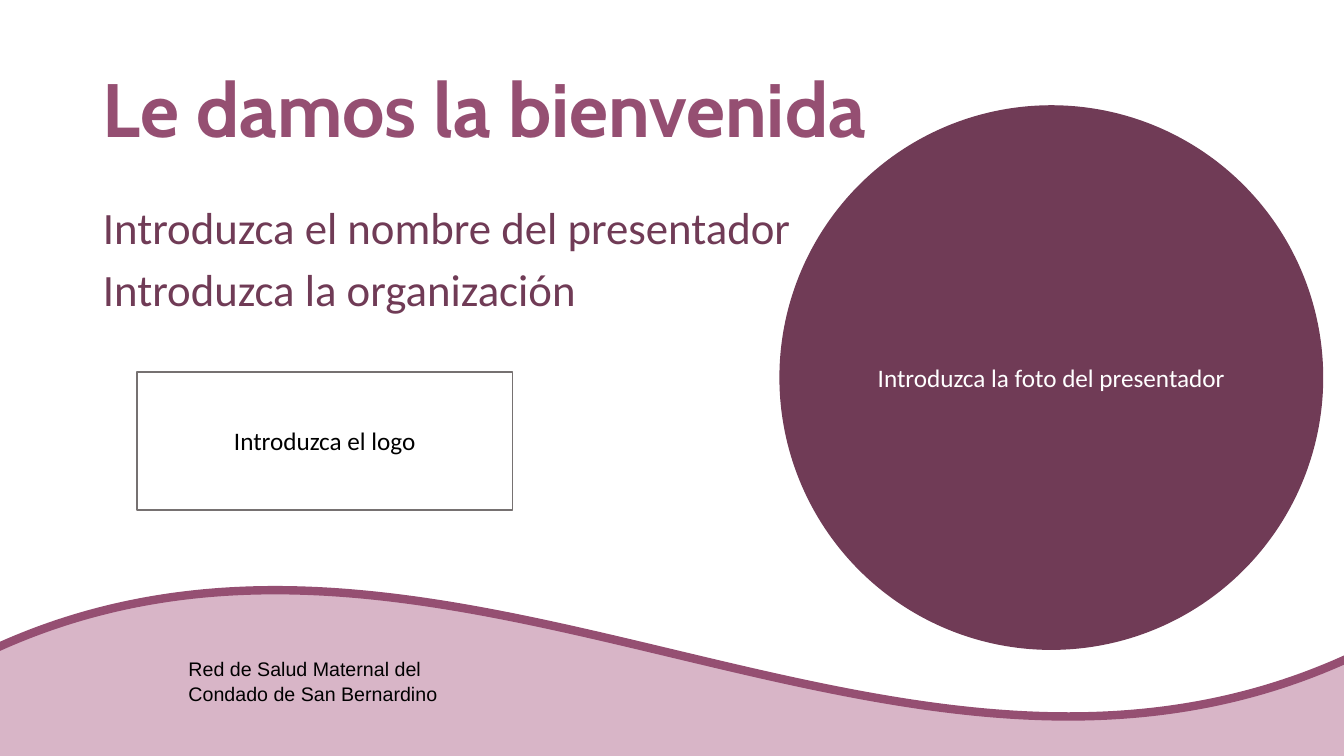
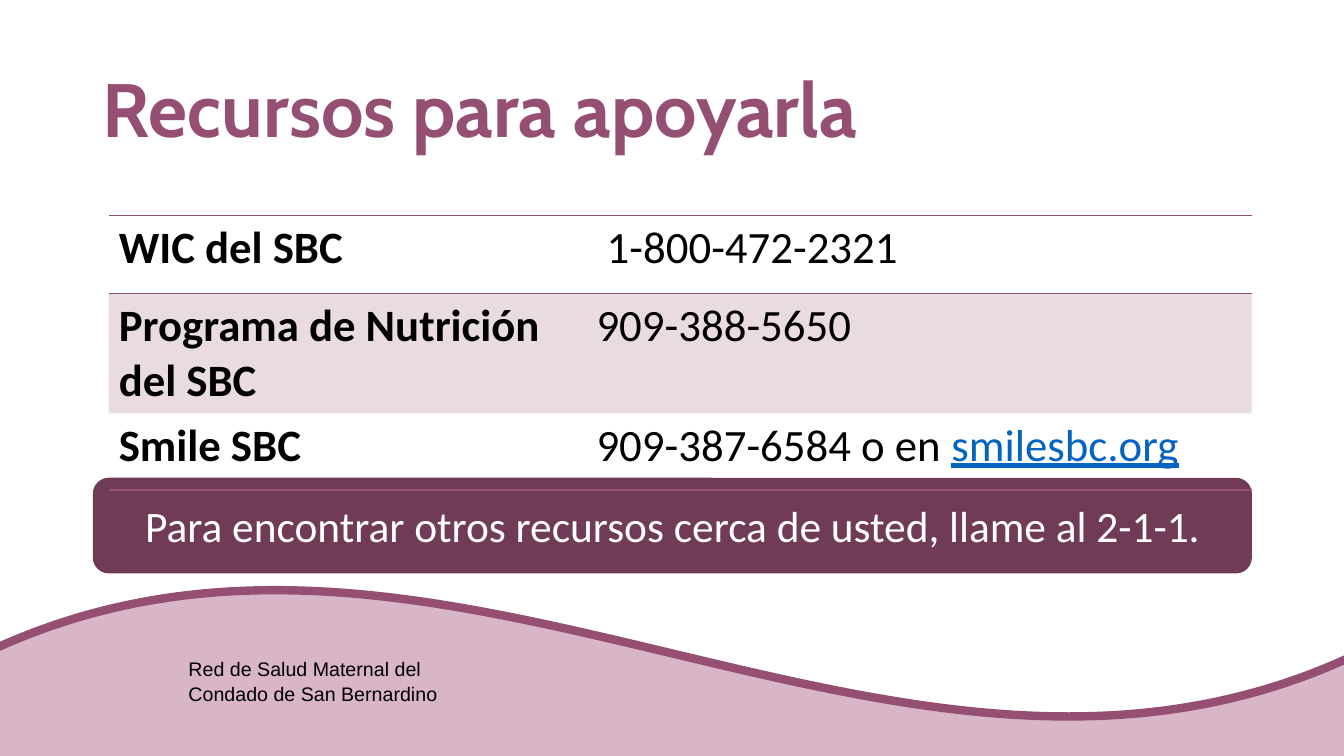
from dataclasses import dataclass

from pptx import Presentation
from pptx.dml.color import RGBColor
from pptx.enum.shapes import MSO_SHAPE
from pptx.enum.text import MSO_ANCHOR, MSO_AUTO_SIZE, PP_ALIGN
from pptx.oxml.ns import qn
from pptx.oxml.xmlchemy import OxmlElement
from pptx.util import Cm, Pt

WAVE, OVAL = MSO_SHAPE.WAVE, MSO_SHAPE.OVAL
RECT, ROUND = MSO_SHAPE.RECTANGLE, MSO_SHAPE.ROUNDED_RECTANGLE
TOP, MIDDLE = MSO_ANCHOR.TOP, MSO_ANCHOR.MIDDLE
LEFT, CENTER = PP_ALIGN.LEFT, PP_ALIGN.CENTER
FIXED = MSO_AUTO_SIZE.NONE
PLAIN = "{2D5ABB26-0587-4C30-8999-92F81FD0307C}"


@dataclass(frozen=True)
class Theme:
    plum: str = "954F72"
    dark: str = "703B56"
    pink: str = "D8B5C7"
    gray: str = "767171"
    link: str = "0563C1"
    white: str = "FFFFFF"
    black: str = "000000"
    head: str = "Cabin"
    text: str = "Calibri"
    foot: str = "Arial"
    huge: int = 54
    large: int = 32
    call: int = 31
    label: int = 18
    small: int = 14


THEME = Theme()


def place(shape, box):
    shape.left, shape.top, shape.width, shape.height = map(Cm, box)


def style(para, size, color, face=THEME.text, bold=False, align=LEFT):
    para.alignment = align
    for run in para.runs:
        font = run.font
        font.name, font.size, font.bold = face, Pt(size), bold
        font.color.rgb = RGBColor.from_string(color)


def paint(fill, color):
    fill.solid()
    fill.fore_color.rgb = RGBColor.from_string(color)


def panel(slide, kind, box, fill, line=None, width=1):
    shape = slide.shapes.add_shape(kind, *map(Cm, box))
    shape.shadow.inherit = False
    paint(shape.fill, fill)
    if line:
        paint(shape.line.fill, line)
        shape.line.width = Pt(width)
    else:
        shape.line.fill.background()
    return shape


def label(shape, text, size, color, face=THEME.text, align=CENTER, anchor=MIDDLE):
    frame = shape.text_frame
    frame.word_wrap = True
    frame.vertical_anchor = anchor
    frame.text = text
    style(frame.paragraphs[0], size, color, face, align=align)
    return frame.paragraphs[0]


def title(slide, text):
    shape = slide.shapes.title
    place(shape, (2.34, 1.02, 29.21, 3.68))
    shape.text_frame.auto_size = FIXED
    para = label(shape, text, THEME.huge, THEME.plum, THEME.head, LEFT)
    para.line_spacing = 0.9
    style(para, THEME.huge, THEME.plum, THEME.head, bold=True)


def body(slide, lines):
    shape = slide.placeholders[1]
    place(shape, (2.34, 5.05, 28.09, 12.09))
    frame = shape.text_frame
    frame.auto_size = FIXED
    frame.text = "\n".join(lines)
    for index, para in enumerate(frame.paragraphs):
        props = para._p.get_or_add_pPr()
        props.set("marL", "0")
        props.set("indent", "0")
        props.append(OxmlElement("a:buNone"))
        para.line_spacing = 0.9
        para.space_before = Pt(10 if index else 0)
        style(para, THEME.large, THEME.dark)


def footer(slide):
    shape = panel(slide, RECT, (4.5, 16.38, 7.39, 1.52), THEME.pink)
    para = label(shape, "Red de Salud Maternal del Condado de San Bernardino",
                 THEME.small, THEME.black, THEME.foot, LEFT, TOP)
    para.line_spacing = 1.07


def backdrop(deck, slide):
    wave = panel(slide, WAVE, (-0.38, 14.81, 34.62, 13.23),
                 THEME.pink, THEME.plum, 6).element
    wave.xpath(".//p:cNvPr")[0].set("id", "20")
    deck.slide_master.shapes.element.insert(2, wave)


def border(cell, side):
    line = OxmlElement(f"a:{side}")
    line.set("w", str(Pt(1)))
    fill = OxmlElement("a:solidFill")
    color = OxmlElement("a:srgbClr")
    color.set("val", THEME.plum)
    fill.append(color)
    line.append(fill)
    cell._tc.get_or_add_tcPr().append(line)


def tint(cell, percent):
    paint(cell.fill, THEME.plum)
    alpha = OxmlElement("a:alpha")
    alpha.set("val", str(percent * 1000))
    cell._tc.tcPr.find(qn("a:solidFill"))[0].append(alpha)


def table(slide, rows, spot, widths, heights):
    frame = slide.shapes.add_table(len(rows), len(widths), *map(Cm, spot),
                                   Cm(sum(widths)), Cm(sum(heights)))
    grid = frame.table
    grid.first_row = grid.horz_banding = False
    next(frame.element.iter(qn("a:tableStyleId"))).text = PLAIN
    for col, width in zip(grid.columns, widths):
        col.width = Cm(width)
    edges = {0: ("lnT", "lnB"), len(rows) - 1: ("lnB",)}
    for r, (texts, height) in enumerate(zip(rows, heights)):
        grid.rows[r].height = Cm(height)
        for c, text in enumerate(texts):
            cell = grid.cell(r, c)
            cell.text = text
            style(cell.text_frame.paragraphs[0], THEME.large, THEME.black, bold=c == 0)
            for side in edges.get(r, ()):
                border(cell, side)
            if r % 2:
                tint(cell, 20)
            else:
                cell.fill.background()
    return grid


def add_link(cell, text):
    para = cell.text_frame.paragraphs[0]
    run = para.add_run()
    run.text = text
    font = run.font
    font.name, font.size, font.bold, font.underline = THEME.text, Pt(THEME.large), False, True
    font.color.rgb = RGBColor.from_string(THEME.link)


def welcome(slide):
    title(slide, "Le damos la bienvenida")
    body(slide, ["Introduzca el nombre del presentador", "Introduzca la organización"])
    photo = panel(slide, OVAL, (19.66, 2.67, 13.67, 13.69), THEME.dark, THEME.dark)
    label(photo, "Introduzca la foto del presentador", THEME.label, THEME.white)
    logo = panel(slide, RECT, (3.45, 9.37, 9.47, 3.48), THEME.white, THEME.gray)
    label(logo, "Introduzca el logo", THEME.label, THEME.black)
    footer(slide)


def support(slide):
    title(slide, "Recursos para apoyarla")
    call = panel(slide, ROUND, (2.34, 12.04, 29.21, 2.41), THEME.dark)
    label(call, "Para encontrar otros recursos cerca de usted, llame al 2-1-1.",
          THEME.call, THEME.white)
    rows = [("WIC del SBC", " 1-800-472-2321"),
            ("Programa de Nutrición del SBC", "909-388-5650"),
            ("Smile SBC", "909-387-6584 o en ")]
    grid = table(slide, rows, (2.74, 5.44), (12.04, 16.76), (1.96, 1.96, 1.93))
    add_link(grid.cell(2, 1), "smilesbc.org")
    footer(slide)


def main():
    deck = Presentation()
    deck.slide_width, deck.slide_height = Cm(33.87), Cm(19.05)
    first = deck.slides.add_slide(deck.slide_layouts[1])
    backdrop(deck, first)
    welcome(first)
    support(deck.slides.add_slide(deck.slide_layouts[5]))
    deck.save("out.pptx")


if __name__ == "__main__":
    main()
